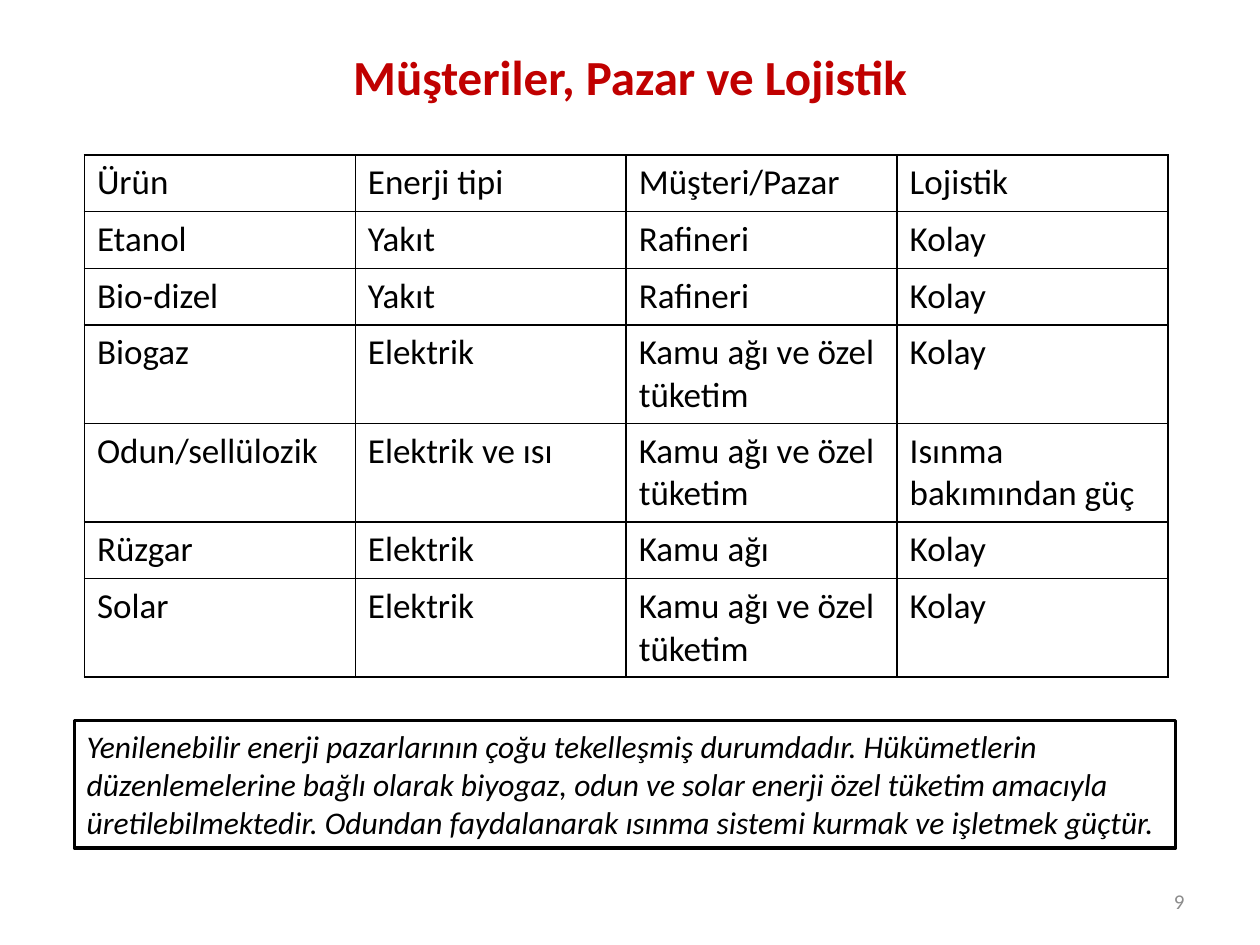
from dataclasses import dataclass

from lxml.etree import SubElement
from pptx import Presentation
from pptx.dml.color import RGBColor
from pptx.enum.shapes import MSO_SHAPE
from pptx.enum.text import MSO_ANCHOR, MSO_AUTO_SIZE, PP_ALIGN
from pptx.oxml.ns import qn
from pptx.util import Inches, Pt


@dataclass(frozen=True)
class Theme:
    font: str = "Calibri"
    title_color: str = "C00000"
    ink: str = "000000"
    paper: str = "FFFFFF"
    muted: str = "8C8C8C"
    title_size: int = 28
    table_size: int = 20
    note_size: int = 18
    number_size: int = 12
    grid_width: int = 1
    frame_width: int = 2


THEME = Theme()
SLIDE_WIDTH, SLIDE_HEIGHT = 10, 7.5
MARGIN = 0.05 * SLIDE_WIDTH

# Table grid
TABLE_LEFT, TABLE_TOP = 0.67, 1.23
COLUMN_WIDTH = 2.15
ONE_LINE, TWO_LINES = 0.45, 0.78
SHARED_MARKET = "Kamu ağı ve özel tüketim"
PRODUCTS = [
    (ONE_LINE, ["Ürün", "Enerji tipi", "Müşteri/Pazar", "Lojistik"]),
    (ONE_LINE, ["Etanol", "Yakıt", "Rafineri", "Kolay"]),
    (ONE_LINE, ["Bio-dizel", "Yakıt", "Rafineri", "Kolay"]),
    (TWO_LINES, ["Biogaz", "Elektrik", SHARED_MARKET, "Kolay"]),
    (TWO_LINES, ["Odun/sellülozik", "Elektrik ve ısı", SHARED_MARKET,
                 "Isınma bakımından güç"]),
    (ONE_LINE, ["Rüzgar", "Elektrik", "Kamu ağı", "Kolay"]),
    (TWO_LINES, ["Solar", "Elektrik", SHARED_MARKET, "Kolay"]),
]
NOTE = (
    "Yenilenebilir enerji pazarlarının çoğu tekelleşmiş durumdadır. "
    "Hükümetlerin düzenlemelerine bağlı olarak biyogaz, odun ve solar enerji "
    "özel tüketim amacıyla üretilebilmektedir. "
    "Odundan faydalanarak ısınma sistemi kurmak ve işletmek güçtür."
)


def write(text_frame, text, size, color, align=PP_ALIGN.LEFT, bold=False, italic=False):
    """Put one formatted run into the first paragraph."""
    text_frame.word_wrap = True
    paragraph = text_frame.paragraphs[0]
    paragraph.alignment = align
    run = paragraph.add_run()
    run.text = text
    run.font.name = THEME.font
    run.font.size = Pt(size)
    run.font.bold = bold
    run.font.italic = italic
    run.font.color.rgb = RGBColor.from_string(color)


def add_title(slide, text):
    title = slide.shapes.title
    title.left, title.top = Inches(MARGIN), Inches(0.3)
    title.width, title.height = Inches(SLIDE_WIDTH - 2 * MARGIN), Inches(0.61)
    title.text_frame.vertical_anchor = MSO_ANCHOR.MIDDLE
    title.text_frame.auto_size = MSO_AUTO_SIZE.NONE
    write(title.text_frame, text, THEME.title_size, THEME.title_color,
          PP_ALIGN.CENTER, bold=True)


def add_borders(cell):
    """Draw a line on all four sides; borders must precede the cell's fill."""
    properties = cell._tc.get_or_add_tcPr()
    for side in ("a:lnL", "a:lnR", "a:lnT", "a:lnB"):
        line = SubElement(properties, qn(side), w=str(Pt(THEME.grid_width)))
        fill = SubElement(line, qn("a:solidFill"))
        SubElement(fill, qn("a:srgbClr"), val=THEME.ink)


def add_product_table(slide):
    heights = [height for height, _ in PRODUCTS]
    columns = len(PRODUCTS[0][1])
    table = slide.shapes.add_table(
        len(PRODUCTS), columns, Inches(TABLE_LEFT), Inches(TABLE_TOP),
        Inches(columns * COLUMN_WIDTH), Inches(sum(heights))).table
    table.first_row = table.horz_banding = False
    for column in table.columns:
        column.width = Inches(COLUMN_WIDTH)
    for row, (height, texts) in zip(table.rows, PRODUCTS):
        row.height = Inches(height)
        for cell, text in zip(row.cells, texts):
            add_borders(cell)
            cell.fill.background()
            write(cell.text_frame, text, THEME.table_size, THEME.ink)


def add_note(slide, text):
    note = slide.shapes.add_shape(
        MSO_SHAPE.RECTANGLE, Inches(0.59), Inches(5.72), Inches(8.74), Inches(1.01))
    note.shadow.inherit = False
    note.fill.solid()
    note.fill.fore_color.rgb = RGBColor.from_string(THEME.paper)
    note.line.color.rgb = RGBColor.from_string(THEME.ink)
    note.line.width = Pt(THEME.frame_width)
    note.text_frame.vertical_anchor = MSO_ANCHOR.TOP
    note.text_frame.auto_size = MSO_AUTO_SIZE.SHAPE_TO_FIT_TEXT
    write(note.text_frame, text, THEME.note_size, THEME.ink, italic=True)


def add_page_number(slide, number):
    width = 2.33
    box = slide.shapes.add_textbox(
        Inches(SLIDE_WIDTH - MARGIN - width), Inches(6.95), Inches(width), Inches(0.4))
    box.text_frame.vertical_anchor = MSO_ANCHOR.MIDDLE
    write(box.text_frame, number, THEME.number_size, THEME.muted, PP_ALIGN.RIGHT)


def main():
    presentation = Presentation()
    presentation.slide_width = Inches(SLIDE_WIDTH)
    presentation.slide_height = Inches(SLIDE_HEIGHT)
    title_only = presentation.slide_layouts[5]
    slide = presentation.slides.add_slide(title_only)

    add_title(slide, "Müşteriler, Pazar ve Lojistik")
    add_product_table(slide)
    add_page_number(slide, "9")
    add_note(slide, NOTE)

    presentation.save("out.pptx")


if __name__ == "__main__":
    main()
